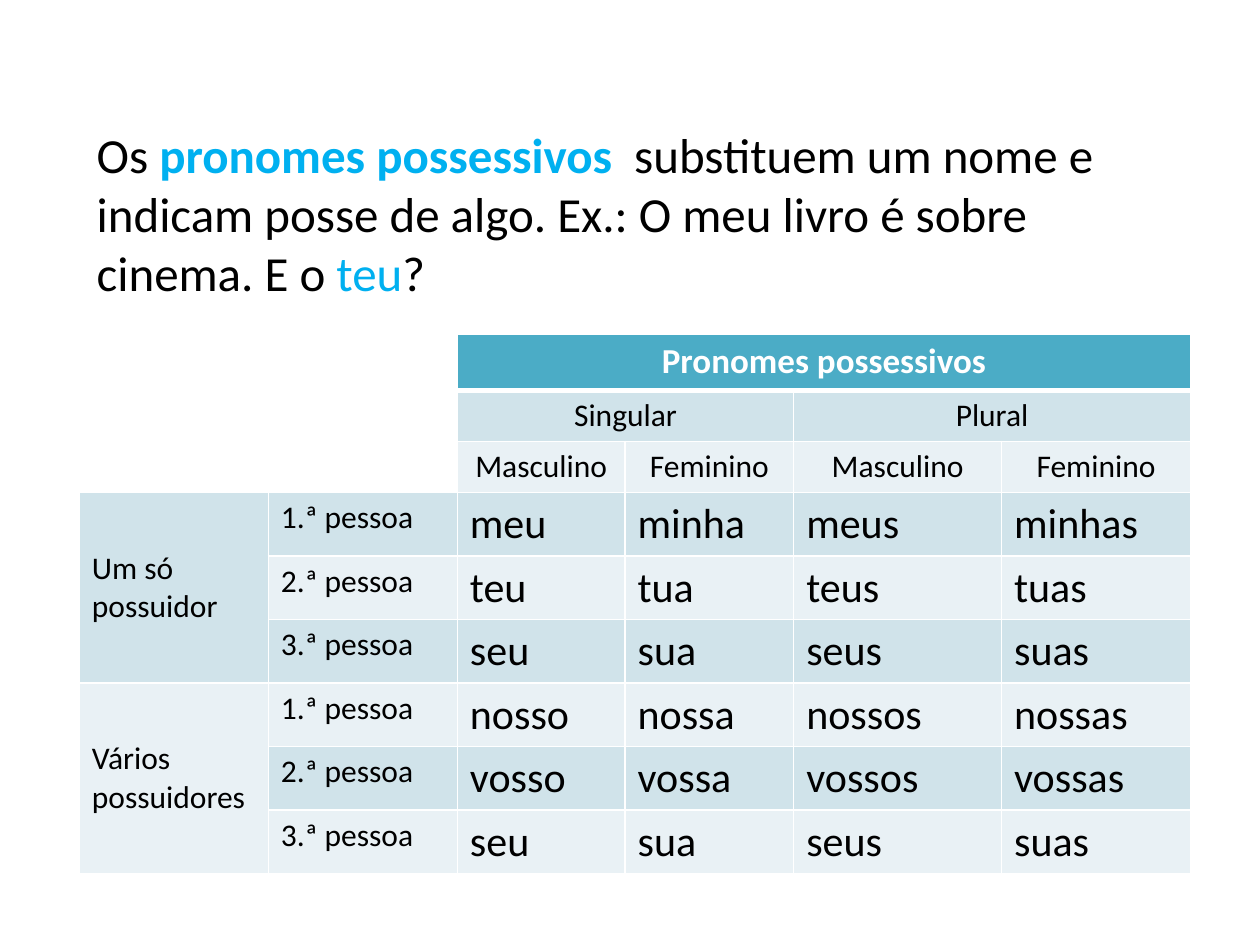
from dataclasses import dataclass
from lxml.etree import SubElement
from pptx import Presentation
from pptx.dml.color import RGBColor
from pptx.enum.text import MSO_ANCHOR, PP_ALIGN
from pptx.oxml.ns import qn
from pptx.table import Table, _Cell
from pptx.util import Cm, Pt

HUES = {
    "ink": "000000",
    "sky": "00B0F0",
    "head": "4BACC6",
    "dark": "D0E3EA",
    "light": "E9F1F5",
    "white": "FFFFFF",
}
WIDTHS = (3.81, 3.81, 3.38, 3.4, 4.19, 3.81)
HEIGHTS = (1.14,) + (1.03,) * 2 + (1.28,) * 6
FORMS = (
    ("meu", "minha", "meus", "minhas"),
    ("teu", "tua", "teus", "tuas"),
    ("seu", "sua", "seus", "suas"),
    ("nosso", "nossa", "nossos", "nossas"),
    ("vosso", "vossa", "vossos", "vossas"),
    ("seu", "sua", "seus", "suas"),
)


@dataclass
class Entry:
    row: int
    col: int
    text: str
    size: int = 18
    rows: int = 1
    cols: int = 1
    align: PP_ALIGN = PP_ALIGN.LEFT
    anchor: MSO_ANCHOR = MSO_ANCHOR.TOP


def add_run(para, text: str, hue: str, size: int, bold: bool = False) -> None:
    run = para.add_run()
    run.text = text
    style = {"name": "Calibri", "size": Pt(size), "bold": bold}
    for key, value in style.items():
        setattr(run.font, key, value)
    run.font.color.rgb = RGBColor.from_string(HUES[hue])


def add_lines(cell: _Cell, row: int) -> None:
    props = cell._tc.get_or_add_tcPr()
    thick = {0: "lnB", 1: "lnT"}.get(row)
    for side in ("lnL", "lnR", "lnT", "lnB"):
        width = Pt(3 if side == thick else 1)
        line = SubElement(props, qn(f"a:{side}"), w=str(width))
        fill = SubElement(line, qn("a:solidFill"))
        SubElement(fill, qn("a:srgbClr"), val=HUES["white"])


def fill_cell(table: Table, entry: Entry) -> None:
    cell = table.cell(entry.row, entry.col)
    if entry.rows * entry.cols > 1:
        cell.merge(table.cell(entry.row + entry.rows - 1,
                              entry.col + entry.cols - 1))
    top = entry.row == 0
    tone = "head" if top else ("light", "dark")[entry.row % 2]
    cell.fill.solid()
    cell.fill.fore_color.rgb = RGBColor.from_string(HUES[tone])
    cell.vertical_anchor = entry.anchor
    para = cell.text_frame.paragraphs[0]
    para.alignment = entry.align
    add_run(para, entry.text, "white" if top else "ink", entry.size, top)


def list_cells() -> list[Entry]:
    mid = PP_ALIGN.CENTER
    cells = [Entry(0, 2, "Pronomes possessivos", 20, cols=4, align=mid)]
    for col, number in ((2, "Singular"), (4, "Plural")):
        cells.append(Entry(1, col, number, cols=2, align=mid))
        for step, gender in enumerate(("Masculino", "Feminino")):
            cells.append(Entry(2, col + step, gender, align=mid))
    for row, owner in ((3, "Um só possuidor"), (6, "Vários possuidores")):
        cells.append(Entry(row, 0, owner, rows=3, anchor=MSO_ANCHOR.MIDDLE))
    for index, forms in enumerate(FORMS):
        row = index + 3
        cells.append(Entry(row, 1, f"{index % 3 + 1}.ª pessoa"))
        for col, form in enumerate(forms, 2):
            cells.append(Entry(row, col, form, 24))
    return cells


def add_intro(slide) -> None:
    box = slide.shapes.add_textbox(Cm(1.7), Cm(2.39), Cm(21.79), Cm(3.84))
    box.text_frame.word_wrap = True
    para = box.text_frame.paragraphs[0]
    for text, hue, bold in (
        ("Os ", "ink", False),
        ("pronomes possessivos  ", "sky", True),
        ("substituem um nome e indicam posse de algo. "
         "Ex.: O meu livro é sobre cinema. E o ", "ink", False),
        ("teu", "sky", False),
        ("?", "ink", False),
    ):
        add_run(para, text, hue, 28, bold)


def add_grid(slide) -> None:
    frame = slide.shapes.add_table(
        len(HEIGHTS), len(WIDTHS), Cm(1.6), Cm(6.73),
        Cm(sum(WIDTHS)), Cm(sum(HEIGHTS)))
    table = frame.table
    table.first_row = table.horz_banding = False
    for column, width in zip(table.columns, WIDTHS):
        column.width = Cm(width)
    for index, (row, height) in enumerate(zip(table.rows, HEIGHTS)):
        row.height = Cm(height)
        for cell in row.cells:
            add_lines(cell, index)
            cell.fill.background()
    for entry in list_cells():
        fill_cell(table, entry)


def main() -> None:
    deck = Presentation()
    deck.slide_width, deck.slide_height = Cm(25.4), Cm(19.05)
    slide = deck.slides.add_slide(deck.slide_layouts[6])
    add_intro(slide)
    add_grid(slide)
    deck.save("out.pptx")


if __name__ == "__main__":
    main()
